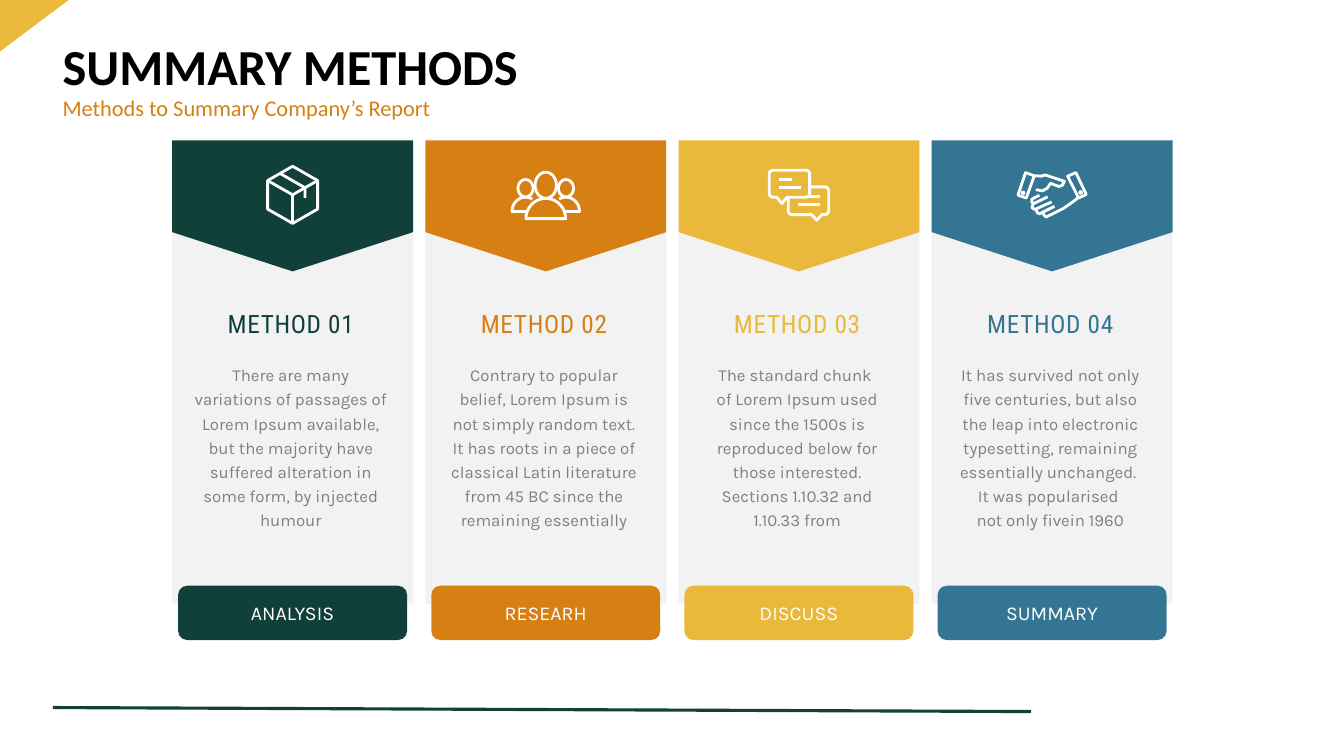
from dataclasses import dataclass
from math import cos, radians, sin

from lxml import etree
from pptx import Presentation
from pptx.dml.color import RGBColor
from pptx.enum import shapes, text
from pptx.oxml import ns
from pptx.util import Cm, Pt

Point = tuple[float, float]
Stroke = list[Point]


@dataclass(frozen=True)
class Theme:
    green: str = "11403A"
    orange: str = "D68013"
    yellow: str = "EAB83B"
    blue: str = "347593"
    panel: str = "F2F2F2"
    body: str = "7F7F7F"
    black: str = "000000"
    white: str = "FFFFFF"
    title_size: float = 36
    heading_size: float = 18
    subtitle_size: float = 16
    label_size: float = 14
    body_size: float = 12
    rule_width: float = 2.25
    icon_width: float = 2


@dataclass(frozen=True)
class Box:
    left: float
    top: float
    width: float
    height: float

    def lengths(self) -> tuple:
        return Cm(self.left), Cm(self.top), Cm(self.width), Cm(self.height)


@dataclass(frozen=True)
class Style:
    size: float
    color: str
    font: str = "Karla"
    bold: bool = False
    spacing: float = 1.0
    tracking: int = 0
    align: text.PP_ALIGN = text.PP_ALIGN.CENTER
    anchor: text.MSO_ANCHOR = text.MSO_ANCHOR.TOP


@dataclass(frozen=True)
class Method:
    heading: str
    body: str
    label: str
    color: str
    icon: list[Stroke]


THEME = Theme()
CARD_LEFT, CARD_PITCH, CARD_WIDTH = 4.34, 6.38, 6.07
CHEVRON_HEIGHT, CHEVRON_MIDDLE, ICON_MIDDLE = 3.3, 5.19, 4.91


def arc(x: float, y: float, rx: float, ry: float, start: int = 0, end: int = 360) -> Stroke:
    steps = 24
    angles = [radians(start + (end - start) * i / steps) for i in range(steps + 1)]
    return [(x + rx * cos(a), y + ry * sin(a)) for a in angles]


def mirror(stroke: Stroke) -> Stroke:
    return [(-x, y) for x, y in stroke]


def box_icon() -> list[Stroke]:
    return [
        [(0, -7.2), (6.3, -3.6), (6.3, 3.6), (0, 7.2), (-6.3, 3.6), (-6.3, -3.6), (0, -7.2)],
        [(-6.3, -3.6), (0, 0), (6.3, -3.6)],
        [(0, 0), (0, 7.2)],
        [(-3.2, -5.4), (3.1, -1.8), (3.1, 0.8)],
    ]


def people_icon() -> list[Stroke]:
    side_head = arc(-5.1, -1.65, 1.9, 2.2)
    side_body = [(-4.8, 4.2)] + arc(-5.1, 4.2, 3.4, 3.6, 180, 300)
    front_body = arc(0, 6, 5, 5.1, 180, 360) + [(-5, 6)]
    return [arc(0, -2.4, 2.7, 3.3), front_body, side_head, side_body,
            mirror(side_head), mirror(side_body)]


def chat_icon() -> list[Stroke]:
    r = 1
    back = (arc(-6.5, -5.2, r, r, 180, 270) + arc(1.7, -5.2, r, r, 270, 360)
            + arc(1.7, -0.4, r, r, 0, 90) + [(-3, 0.6), (-4.3, 2.2), (-5.6, 0.6)]
            + arc(-6.5, -0.4, r, r, 90, 180) + [(-7.5, -5.2)])
    front = ([(2.7, -2)] + arc(6.5, -1, r, r, 270, 360) + arc(6.5, 4, r, r, 0, 90)
             + [(5.8, 5), (4.5, 6.4), (3.2, 5)] + arc(-1.7, 4, r, r, 90, 180) + [(-2.7, 0.6)])
    words = [(-4.9, -1.7, -3.8), (-4.9, 0.4, -1.8), (2.2, 5.2, 0.5), (-0.3, 5.2, 2.4)]
    return [back, front] + [[(x1, y), (x2, y)] for x1, x2, y in words]


def handshake_icon() -> list[Stroke]:
    return [
        [(-6.7, -5.6), (-4.5, -4.8), (-6.5, 0.8), (-8.6, 0.1), (-6.7, -5.6)],
        [(6, -5.6), (8.6, -0.1), (6.7, 0.8), (3.9, -4.7), (6, -5.6)],
        [(-4.3, -4.8), (-2.8, -4.7), (-1.7, -5), (3.1, -3.4), (2.6, -2.4), (1.7, -2.1),
         (-0.4, -2.9), (-1.2, -1.7), (-2.4, -1), (-4.1, -1.3)],
        [(-3.2, 0.1), (-5.1, 1.1), (-5.1, 1.9), (-4.6, 2.2), (-1.1, 0.5)],
        [(-4.8, 2.4), (-5.1, 3.2), (-4.4, 3.7), (-0.1, 1.8)],
        [(-3.9, 3.8), (-3.8, 4.5), (-3.2, 4.8), (0.6, 2.9)],
        [(-2.2, 4.5), (-2.1, 5.1), (-1.5, 5.6), (2.9, 3.4), (5.2, 1.8), (6.6, 0.7)],
        arc(-7.3, -0.5, 0.2, 0.2),
        arc(7.2, -0.6, 0.2, 0.2),
    ]


METHODS = [
    Method("METHOD 01", "There are many variations of passages of Lorem Ipsum available, but the "
           "majority have suffered alteration in some form, by injected humour",
           "ANALYSIS", THEME.green, box_icon()),
    Method("METHOD 02", "Contrary to popular belief, Lorem Ipsum is not simply random text. It has "
           "roots in a piece of classical Latin literature from 45 BC since the remaining essentially",
           "RESEARH", THEME.orange, people_icon()),
    Method("METHOD 03", "The standard chunk \nof Lorem Ipsum used since the 1500s is reproduced below "
           "for those interested. Sections 1.10.32 and 1.10.33 from",
           "DISCUSS", THEME.yellow, chat_icon()),
    Method("METHOD 04", "It has survived not only five centuries, but also the leap into electronic "
           "typesetting, remaining essentially unchanged. \nIt was popularised \nnot only fivein 1960",
           "SUMMARY", THEME.blue, handshake_icon()),
]


def write(sp, content: str, style: Style) -> None:
    tf = sp.text_frame
    tf.word_wrap = True
    tf.vertical_anchor = style.anchor
    p = tf.paragraphs[0]
    p.text = content
    p.alignment = style.align
    p.line_spacing = style.spacing
    for r in p.runs:
        r.font.name, r.font.size, r.font.bold = style.font, Pt(style.size), style.bold
        r.font.color.rgb = RGBColor.from_string(style.color)
        if style.tracking:
            r.font._element.set("spc", str(style.tracking))


def add_text(slide, box: Box, content: str, style: Style) -> None:
    write(slide.shapes.add_textbox(*box.lengths()), content, style)


def add_block(slide, kind: shapes.MSO_SHAPE, box: Box, color: str):
    sp = slide.shapes.add_shape(kind, *box.lengths())
    sp.shadow.inherit = False
    sp.fill.solid()
    sp.fill.fore_color.rgb = RGBColor.from_string(color)
    sp.line.fill.background()
    return sp


def add_icon(slide, x: float, y: float, strokes: list[Stroke]) -> None:
    outlines = [[(Cm(x + px / 10), Cm(y + py / 10)) for px, py in s] for s in strokes]
    builder = slide.shapes.build_freeform(*outlines[0][0])
    for i, outline in enumerate(outlines):
        if i:
            builder.move_to(*outline[0])
        builder.add_line_segments(outline[1:], close=False)
    sp = builder.convert_to_shape()
    sp.shadow.inherit = False
    sp.fill.background()
    sp.line.color.rgb = RGBColor.from_string(THEME.white)
    sp.line.width = Pt(THEME.icon_width)


def add_card(slide, left: float, method: Method) -> None:
    middle = left + CARD_WIDTH / 2
    add_block(slide, shapes.MSO_SHAPE.RECTANGLE, Box(left, 4.9, CARD_WIDTH, 10.31), THEME.panel)
    chevron = add_block(slide, shapes.MSO_SHAPE.PENTAGON, Box(
        middle - CHEVRON_HEIGHT / 2, CHEVRON_MIDDLE - CARD_WIDTH / 2, CHEVRON_HEIGHT, CARD_WIDTH),
        method.color)
    chevron.rotation = 90
    chevron.adjustments[0] = 0.3
    label = add_block(slide, shapes.MSO_SHAPE.ROUNDED_RECTANGLE,
                      Box(left + 0.15, 14.76, 5.77, 1.37), method.color)
    write(label, method.label, Style(THEME.label_size, THEME.white, anchor=text.MSO_ANCHOR.MIDDLE))
    add_text(slide, Box(left + 0.26, 8.97, 5.46, 4.85), method.body,
             Style(THEME.body_size, THEME.body, spacing=1.2))
    add_text(slide, Box(left + 0.26, 7.65, 5.46, 1.02), method.heading,
             Style(THEME.heading_size, method.color, "Roboto Condensed", tracking=50))
    add_icon(slide, middle, ICON_MIDDLE, method.icon)


def add_frame(slide) -> None:
    rule = slide.shapes.add_connector(shapes.MSO_CONNECTOR.STRAIGHT,
                                      Cm(1.33), Cm(17.83), Cm(25.98), Cm(17.93))
    rule.line.color.rgb = RGBColor.from_string(THEME.green)
    rule.line.width = Pt(THEME.rule_width)
    etree.SubElement(rule._element.spPr, ns.qn("a:effectLst"))
    corner = add_block(slide, shapes.MSO_SHAPE.RIGHT_TRIANGLE, Box(0, 0, 1.73, 1.3), THEME.yellow)
    corner._element.spPr.find(ns.qn("a:xfrm")).set("flipV", "1")
    left, middle = text.PP_ALIGN.LEFT, text.MSO_ANCHOR.MIDDLE
    add_text(slide, Box(1.33, 0.99, 31.21, 1.52), "SUMMARY METHODS",
             Style(THEME.title_size, THEME.black, "Calibri", True, 0.9, 0, left, middle))
    add_text(slide, Box(1.33, 2.26, 31.21, 0.99), "Methods to Summary Company’s Report",
             Style(THEME.subtitle_size, THEME.orange, "Calibri", False, 0.9, 0, left, middle))


def main() -> None:
    prs = Presentation()
    prs.slide_width, prs.slide_height = Cm(33.87), Cm(19.05)
    slide = prs.slides.add_slide(prs.slide_layouts[6])
    add_frame(slide)
    for i, method in enumerate(METHODS):
        add_card(slide, CARD_LEFT + i * CARD_PITCH, method)
    prs.save("out.pptx")


if __name__ == "__main__":
    main()
